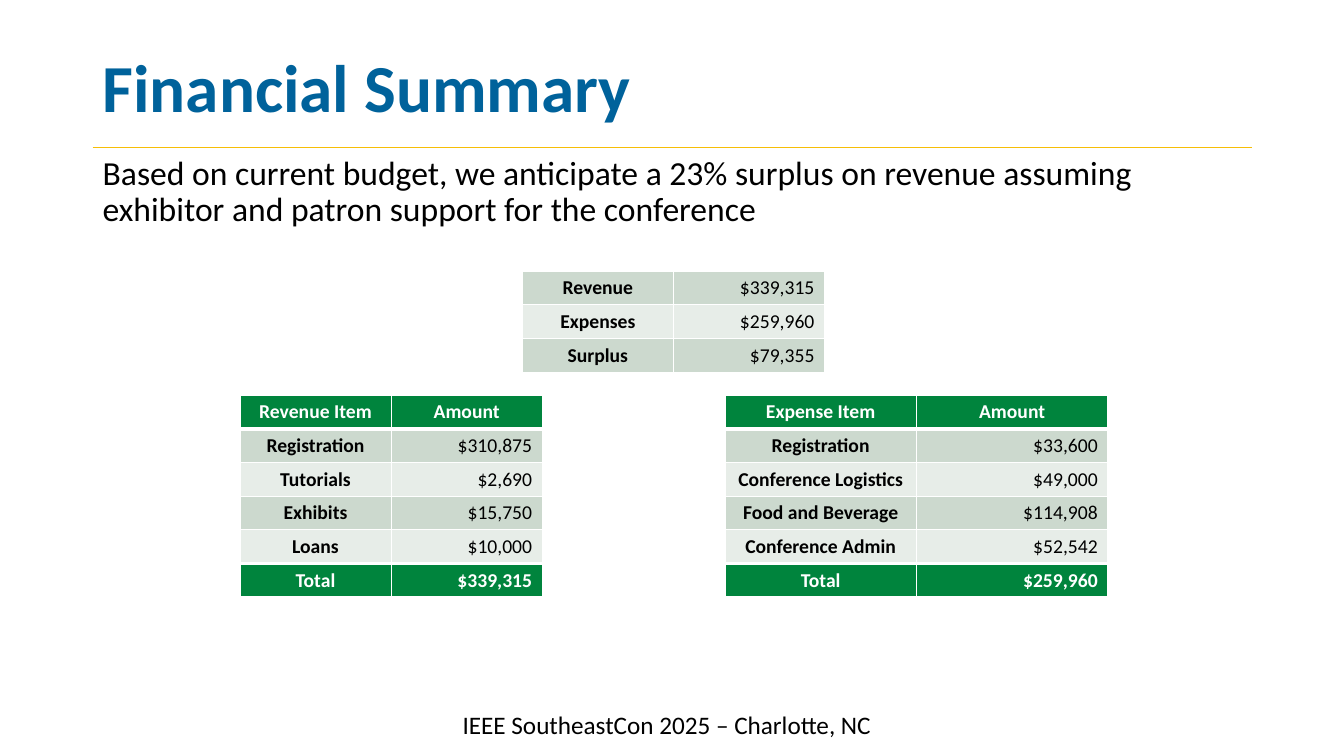
from lxml.etree import SubElement as Sub
from pptx import Presentation
from pptx.dml.color import RGBColor
from pptx.enum.shapes import MSO_CONNECTOR as Link
from pptx.enum.text import MSO_ANCHOR as Anchor, PP_ALIGN as Align
from pptx.oxml.ns import qn
from pptx.util import Inches, Pt

WIDE, HIGH = Inches(13.33), Inches(7.5)
WHITE, BLACK, GREEN, BLUE, GOLD = "FFFFFF", "000000", "00843D", "00629B", "F6BE07"
BANDS = "CCD9CE", "E7EDE8"
ROW = 4.44  # table row height, percent of the slide

SUMS = [("Revenue", "$339,315"), ("Expenses", "$259,960"), ("Surplus", "$79,355")]
INCOME = [
    ("Revenue Item", "Amount"),
    ("Registration", "$310,875"),
    ("Tutorials", "$2,690"),
    ("Exhibits", "$15,750"),
    ("Loans", "$10,000"),
    ("Total", "$339,315"),
]
COSTS = [
    ("Expense Item", "Amount"),
    ("Registration", "$33,600"),
    ("Conference Logistics", "$49,000"),
    ("Food and Beverage", "$114,908"),
    ("Conference Admin", "$52,542"),
    ("Total", "$259,960"),
]


# Percent of the slide's width and height
def across(share):
    return round(WIDE * share / 100)


def down(share):
    return round(HIGH * share / 100)


def paint(code):
    return RGBColor.from_string(code)


def write(frame, text, size=14, color=BLACK, bold=False, align=Align.LEFT, lead=1.0):
    para = frame.paragraphs[0]
    para.alignment, para.line_spacing = align, lead
    run = para.add_run()
    run.text = text
    font = run.font
    font.name, font.size, font.bold = "Calibri", Pt(size), bold
    font.color.rgb = paint(color)


def add_text(slide, text, x, y, w, h, anchor=Anchor.TOP, wrap=True, **style):
    box = slide.shapes.add_textbox(across(x), down(y), across(w), down(h))
    frame = box.text_frame
    frame.word_wrap, frame.vertical_anchor = wrap, anchor
    write(frame, text, **style)


def add_rule(slide, left, right, y):
    rule = slide.shapes.add_connector(
        Link.STRAIGHT, across(left), down(y), across(right), down(y))
    rule.line.color.rgb, rule.line.width = paint(GOLD), Pt(0.5)
    Sub(rule.element.spPr, qn("a:effectLst"))


def edge(cell, top, base):
    props = cell._tc.get_or_add_tcPr()
    for side, width in zip("LRTB", (1, 1, top, base)):
        line = Sub(props, qn("a:ln" + side), w=str(Pt(width)))
        Sub(Sub(line, qn("a:solidFill")), qn("a:srgbClr"), val=WHITE)


def add_grid(slide, rows, x, y, w, framed=True):
    """Two equal columns; a framed grid has a green head and total row."""
    last = len(rows) - 1
    table = slide.shapes.add_table(
        len(rows), 2, across(x), down(y), across(w), down(ROW * len(rows))).table
    table.first_row = table.horz_banding = False
    for r, row in enumerate(rows):
        head, total = framed and r == 0, framed and r == last
        strong = head or total
        top = 3 if total or (framed and r == 1) else 1
        base = 3 if head or (framed and r == last - 1) else 1
        for c, text in enumerate(row):
            cell = table.cell(r, c)
            edge(cell, top, base)
            cell.fill.solid()
            cell.fill.fore_color.rgb = paint(GREEN if strong else BANDS[(r - framed) % 2])
            write(cell.text_frame, text, bold=strong or c == 0,
                  color=WHITE if strong else BLACK,
                  align=Align.CENTER if head or c == 0 else Align.RIGHT)


def main():
    deck = Presentation()
    deck.slide_width, deck.slide_height = WIDE, HIGH
    slide = deck.slides.add_slide(deck.slide_layouts[6])

    # Footer and heading
    add_text(slide, "IEEE SoutheastCon 2025 – Charlotte, NC", 33.68, 93.2, 32.33, 5.33,
             wrap=False, size=18)
    add_rule(slide, 6.9, 93.17, 19.47)
    add_text(slide, "Financial Summary", 6.9, 5.33, 76.97, 13.33,
             anchor=Anchor.MIDDLE, size=48, color=BLUE, bold=True, lead=0.9)

    # Message
    add_text(slide, "Based on current budget, we anticipate a 23% surplus on revenue "
             "assuming exhibitor and patron support for the conference",
             6.9, 20, 86.27, 72, size=24, lead=0.9)

    # Tables
    add_grid(slide, SUMS, 38.86, 35.87, 22.5, framed=False)
    add_grid(slide, INCOME, 17.85, 52.27, 22.5)
    add_grid(slide, COSTS, 53.94, 52.27, 28.5)

    deck.save("out.pptx")


if __name__ == "__main__":
    main()
